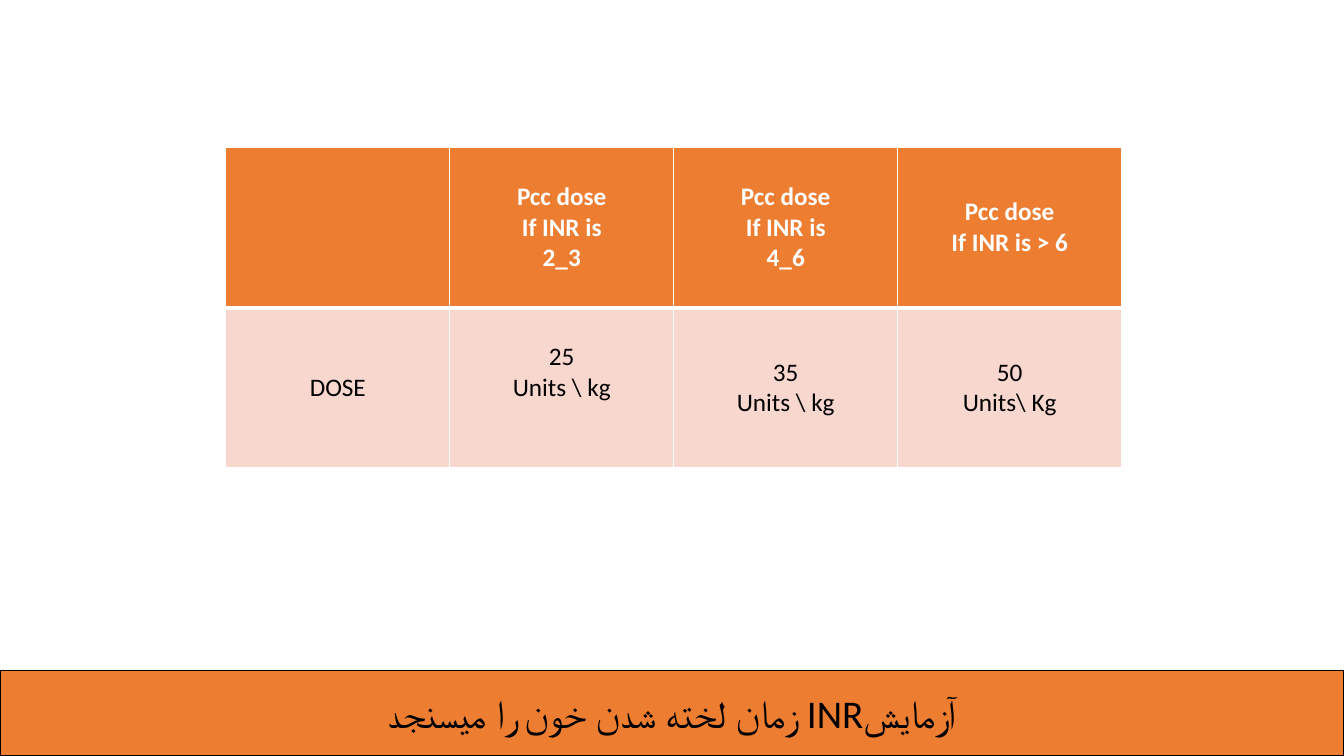
from lxml import etree
from pptx import Presentation
from pptx.dml.color import RGBColor
from pptx.enum import shapes, text
from pptx.oxml import ns
from pptx.util import Pt

ORANGE = RGBColor(0xED, 0x7D, 0x31)
PINK = RGBColor(0xF8, 0xD7, 0xCE)
WHITE = RGBColor(0xFF, 0xFF, 0xFF)
BLACK = RGBColor(0x00, 0x00, 0x00)
FONT = "Calibri"

HEADINGS = ["", "Pcc dose\nIf INR is\n2_3", "Pcc dose\nIf INR is\n4_6",
            "Pcc dose\nIf INR is > 6"]
DOSES = ["DOSE", "25\nUnits \\ kg", "35\nUnits \\ kg", "50\nUnits\\ Kg"]
BANNER = "آزمایشINR زمان لخته شدن خون را میسنجد"


def write_text(frame, words, size, color, bold=False):
    """Write centred paragraphs, one per line of words."""
    frame.text = words
    for para in frame.paragraphs:
        para.alignment = text.PP_ALIGN.CENTER
        para.font.name = FONT
        para.font.size = Pt(size)
        para.font.bold = bold
        para.font.color.rgb = color


def add_borders(cell, top, bottom):
    """Draw white borders; the side lines are 1 pt wide."""
    properties = cell._tc.get_or_add_tcPr()
    for side, width in (("L", 1), ("R", 1), ("T", top), ("B", bottom)):
        line = etree.SubElement(properties, ns.qn(f"a:ln{side}"), w=str(Pt(width)))
        fill = etree.SubElement(line, ns.qn("a:solidFill"))
        etree.SubElement(fill, ns.qn("a:srgbClr"), val=str(WHITE))


def fill_row(row, words, background, color, bold, top, bottom):
    for cell, label in zip(row.cells, words):
        add_borders(cell, top, bottom)
        cell.fill.solid()
        cell.fill.fore_color.rgb = background
        cell.vertical_anchor = text.MSO_ANCHOR.MIDDLE
        write_text(cell.text_frame, label, 18, color, bold)


def add_dose_table(page):
    frame = page.shapes.add_table(2, 4, Pt(161.3), Pt(105.3), Pt(640), Pt(229))
    table = frame.table
    fill_row(table.rows[0], HEADINGS, ORANGE, WHITE, True, 1, 3)
    fill_row(table.rows[1], DOSES, PINK, BLACK, False, 3, 1)
    # The first dose sits a little above the middle of its cell
    table.cell(1, 1).margin_bottom = Pt(25.6)


def add_banner(page, words):
    box = page.shapes.add_shape(shapes.MSO_SHAPE.RECTANGLE,
                                Pt(0), Pt(478.8), Pt(960), Pt(61.2))
    box.shadow.inherit = False
    box.fill.solid()
    box.fill.fore_color.rgb = ORANGE
    box.line.color.rgb = BLACK
    box.line.width = Pt(1)
    frame = box.text_frame
    frame.word_wrap = True
    frame.vertical_anchor = text.MSO_ANCHOR.MIDDLE
    write_text(frame, words, 28, BLACK)
    # Right-to-left reading order
    frame.paragraphs[0]._p.get_or_add_pPr().set("rtl", "1")


def main():
    deck = Presentation()
    deck.slide_width, deck.slide_height = Pt(960), Pt(540)
    page = deck.slides.add_slide(deck.slide_layouts[6])
    add_dose_table(page)
    add_banner(page, BANNER)
    deck.save("out.pptx")


if __name__ == "__main__":
    main()
